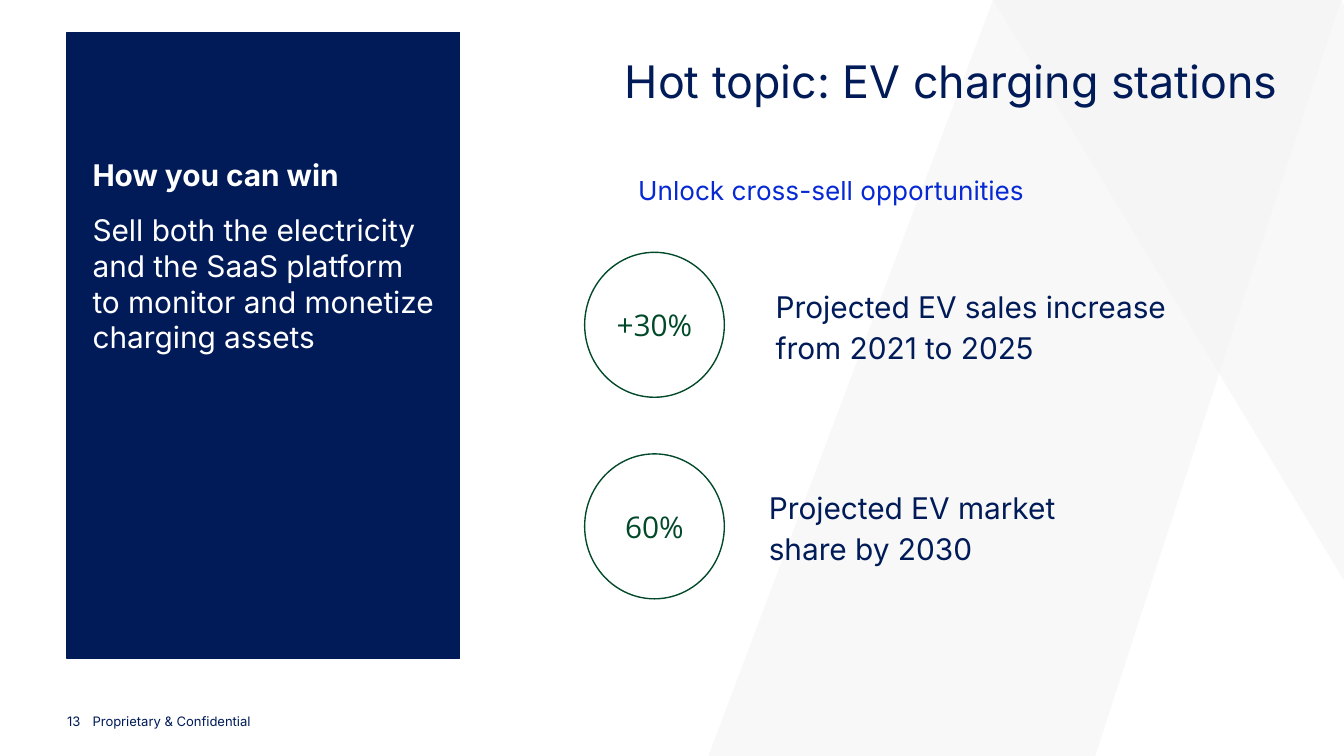
from pptx import Presentation
from pptx.dml.color import RGBColor
from pptx.enum import shapes, text
from pptx.util import Cm, Pt

NAVY, GREEN, BLUE, WHITE = "011B58", "014929", "0629D3", "FFFFFF"


def rgb(hex_code):
    return RGBColor.from_string(hex_code)


def add_text(box, lines, size, color, font="Inter", inset=0.0, anchor="TOP"):
    """Write one paragraph per line into a shape and return the paragraphs."""
    frame = box.text_frame
    frame.word_wrap = True
    frame.vertical_anchor = text.MSO_ANCHOR[anchor]
    frame.margin_left = frame.margin_right = Cm(inset)
    frame.margin_top = frame.margin_bottom = Cm(inset)
    frame.text = "\n".join(lines)
    for paragraph in frame.paragraphs:
        paragraph.font.name = font
        paragraph.font.size = Pt(size)
        paragraph.font.color.rgb = rgb(color)
    return frame.paragraphs


deck = Presentation()
deck.slide_width, deck.slide_height = Cm(25.4), Cm(14.29)
slide = deck.slides.add_slide(deck.slide_layouts[6])
canvas = slide.shapes

# Background bands
bands = [
    ("F8F8F8", [(25.35, 0), (23.04, 7.06), (25.4, 10.97), (25.4, 0.1)]),
    ("F8F8F8", [(18.77, 0), (13.39, 14.29), (20.7, 14.29), (23.04, 7.06)]),
    ("F5F5F5", [(18.77, 0), (23.04, 7.06), (25.35, 0)]),
]
for shade, corners in bands:
    points = [(Cm(x), Cm(y)) for x, y in corners]
    outline = canvas.build_freeform(*points[0])
    outline.add_line_segments(points[1:], close=True)
    band = outline.convert_to_shape()
    band.shadow.inherit = False
    band.fill.solid()
    band.fill.fore_color.rgb = rgb(shade)
    band.line.fill.background()

# Footer
for left, width, words, anchor in [
    (1.27, 0.48, "13", "MIDDLE"),
    (1.75, 6.71, "Proprietary & Confidential", "TOP"),
]:
    footer = canvas.add_textbox(Cm(left), Cm(13.49), Cm(width), Cm(0.3))
    add_text(footer, [words], 7, NAVY, anchor=anchor)

# Left panel
panel = canvas.add_shape(
    shapes.MSO_SHAPE.RECTANGLE, Cm(1.27), Cm(0.61), Cm(7.42), Cm(11.84))
panel.shadow.inherit = False
panel.fill.solid()
panel.fill.fore_color.rgb = rgb(NAVY)
panel.line.color.rgb = rgb(NAVY)
panel.line.width = Pt(0.75)

advice = canvas.add_textbox(Cm(1.75), Cm(2.97), Cm(6.53), Cm(3.86))
heading, pitch = add_text(advice, [
    "How you can win",
    "Sell both the electricity and the SaaS platform "
    "to monitor and monetize charging assets",
], 16, WHITE)
heading.font.bold = True
pitch.space_before = pitch.space_after = Pt(10)

# Title and subtitle
title = canvas.add_textbox(Cm(11.81), Cm(1.14), Cm(12.85), Cm(1.83))
add_text(title, ["Hot topic: EV charging stations"], 24, NAVY)[0].line_spacing = 0.9

subtitle = canvas.add_textbox(Cm(11.81), Cm(3.05), Cm(11.56), Cm(1.12))
add_text(subtitle, ["Unlock cross-sell opportunities"], 14, BLUE, inset=0.25)

# Key figures
figures = [
    ("+30%", "Projected EV sales increase from 2021 to 2025", 14.66, 7.42),
    ("60%", "Projected EV market share by 2030", 14.53, 5.84),
]
for row, (value, meaning, left, width) in enumerate(figures):
    top = 4.77 + row * 3.81
    circle = canvas.add_shape(
        shapes.MSO_SHAPE.OVAL, Cm(11.05), Cm(top), Cm(2.64), Cm(2.74))
    circle.shadow.inherit = False
    circle.fill.background()
    circle.line.color.rgb = rgb(GREEN)
    circle.line.width = Pt(0.75)
    number = add_text(circle, [value], 16, GREEN, "Open Sans", anchor="MIDDLE")[0]
    number.alignment = text.PP_ALIGN.CENTER

    label = canvas.add_textbox(Cm(left), Cm(top + 0.18), Cm(width), Cm(2.36))
    add_text(label, [meaning], 16, NAVY, anchor="MIDDLE")[0].line_spacing = 1.15

deck.save("out.pptx")
